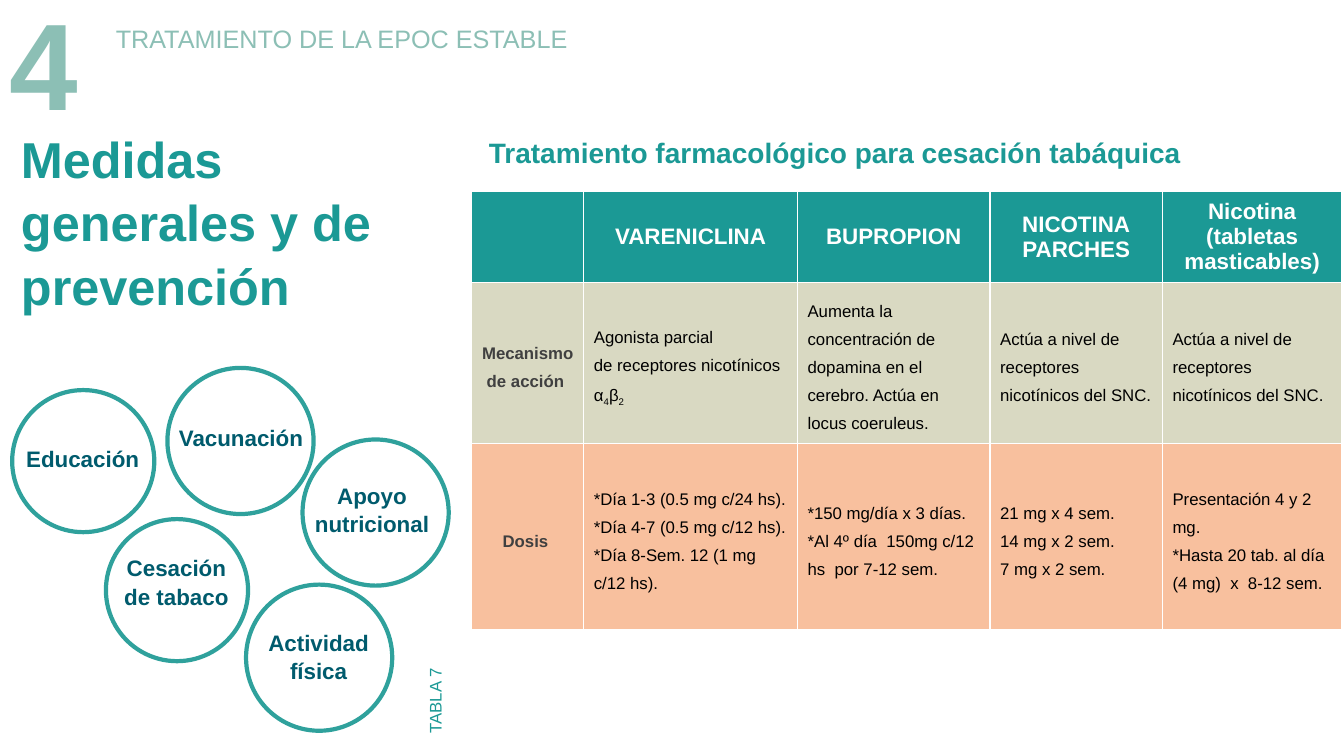
from lxml import etree
from pptx import Presentation
from pptx.dml.color import RGBColor
from pptx.enum.shapes import MSO_SHAPE
from pptx.enum.text import MSO_ANCHOR, MSO_AUTO_SIZE, PP_ALIGN
from pptx.oxml.ns import qn
from pptx.util import Inches, Pt

LEFT, CENTER = PP_ALIGN.LEFT, PP_ALIGN.CENTER
MIDDLE = MSO_ANCHOR.MIDDLE
GROW = MSO_AUTO_SIZE.SHAPE_TO_FIT_TEXT
ELLIPSE = MSO_SHAPE.OVAL

FONT = "Arial"
COLORS = {
    "teal": "1B9995",
    "pale_teal": "8CBFB5",
    "ring": "2FA19C",
    "label": "005B6D",
    "olive": "B9B98D",
    "orange": "F2833E",
    "gray": "404040",
    "black": "000000",
    "white": "FFFFFF",
}

COLUMN_WIDTHS = [1.11, 2.12, 1.91, 1.71, 1.78]
ROW_HEIGHTS = [0.88, 1.59, 1.85]
ROW_FILLS = [("teal", 100), ("olive", 53), ("orange", 50)]
NICOTINE_ACTION = ["Actúa a nivel de receptores nicotínicos del SNC."]
TREATMENTS = [
    [
        [],
        ["VARENICLINA"],
        ["BUPROPION"],
        ["NICOTINA", "PARCHES"],
        ["Nicotina", "(tabletas masticables)"],
    ],
    [
        ["Mecanismo ", "de acción "],
        ["Agonista parcial", ("de receptores nicotínicos α", "4", "β", "2")],
        ["Aumenta la concentración de dopamina en el cerebro. Actúa en locus coeruleus."],
        NICOTINE_ACTION,
        NICOTINE_ACTION,
    ],
    [
        ["Dosis "],
        ["*Día 1-3 (0.5 mg c/24 hs).", "*Día 4-7 (0.5 mg c/12 hs).",
         "*Día 8-Sem. 12 (1 mg c/12 hs)."],
        ["*150 mg/día x 3 días.", "*Al 4º día  150mg c/12 hs  por 7-12 sem."],
        ["21 mg x 4 sem.", "14 mg x 2 sem.", "7 mg x 2 sem."],
        ["Presentación 4 y 2 mg.", "*Hasta 20 tab. al día (4 mg)  x  8-12 sem."],
    ],
]

MEASURES = [
    (["Educación"], -0.3, 4.35, 0.12, 3.87, 1.41),
    (["Cesación", "de tabaco"], 0.63, 5.44, 1.05, 5.15, 1.41),
    (["Vacunación"], 1.27, 4.15, 1.66, 3.65, 1.45),
    (["Apoyo", "nutricional"], 2.57, 4.72, 3, 4.36, 1.45),
    (["Actividad", "física"], 2.04, 6.18, 2.44, 5.8, 1.45),
]


def color(name):
    """Return the named colour."""
    return RGBColor.from_string(COLORS[name])


def write_lines(frame, lines, size, color_name, bold=False, align=LEFT, spacing=1.05):
    """Write one paragraph per line; odd pieces of a tuple are subscripts."""
    for index, line in enumerate(lines):
        para = frame.add_paragraph() if index else frame.paragraphs[0]
        para.alignment = align
        para.line_spacing = spacing
        pieces = (line,) if isinstance(line, str) else line
        for position, piece in enumerate(pieces):
            span = para.add_run()
            span.text = piece
            span.font.name = FONT
            span.font.size = Pt(size)
            span.font.bold = bold
            span.font.color.rgb = color(color_name)
            if position % 2:
                span.font._element.set("baseline", "-25000")


def add_text(shapes, lines, bounds, size, color_name, bold=False, align=LEFT, wrap=True):
    """Add a text box and return it."""
    box = shapes.add_textbox(*map(Inches, bounds))
    box.text_frame.word_wrap = wrap
    box.text_frame.auto_size = GROW
    write_lines(box.text_frame, lines, size, color_name, bold, align)
    return box


def add_measure(page, lines, text_left, text_top, ring_left, ring_top, diameter):
    """Add a grouped label and its ring."""
    group = page.shapes.add_group_shape()
    height = 0.1 + 0.27 * len(lines)
    add_text(group.shapes, lines, (text_left, text_top, 2.24, height),
             16, "label", bold=True, align=CENTER)
    bounds = map(Inches, (ring_left, ring_top, diameter, diameter))
    ring = group.shapes.add_shape(ELLIPSE, *bounds)
    ring.rotation = 45
    ring.shadow.inherit = False
    ring.fill.background()
    ring.line.color.rgb = color("ring")
    ring.line.width = Pt(3)


def fill_cell(cell, color_name, opacity):
    """Fill a cell with the given opacity in percent."""
    cell.fill.solid()
    cell.fill.fore_color.rgb = color(color_name)
    if opacity < 100:
        swatch = cell._tc.tcPr.find(".//" + qn("a:srgbClr"))
        etree.SubElement(swatch, qn("a:alpha")).set("val", str(opacity * 1000))


def add_treatments(page):
    """Add the table of drug treatments."""
    bounds = (4.68, 1.9, sum(COLUMN_WIDTHS), sum(ROW_HEIGHTS))
    table = page.shapes.add_table(
        len(ROW_HEIGHTS), len(COLUMN_WIDTHS), *map(Inches, bounds)).table
    table.horz_banding = False
    for column, width in zip(table.columns, COLUMN_WIDTHS):
        column.width = Inches(width)
    for row, height in zip(table.rows, ROW_HEIGHTS):
        row.height = Inches(height)
    for row_index, row_lines in enumerate(TREATMENTS):
        for column_index, lines in enumerate(row_lines):
            cell = table.cell(row_index, column_index)
            cell.vertical_anchor = MIDDLE
            fill_cell(cell, *ROW_FILLS[row_index])
            if row_index == 0:
                write_lines(cell.text_frame, lines, 16, "white", True, CENTER, 1.0)
            elif column_index == 0:
                write_lines(cell.text_frame, lines, 12, "gray", True, CENTER, 1.5)
            else:
                write_lines(cell.text_frame, lines, 12, "black", spacing=1.5)


def main():
    """Build and save the slide."""
    deck = Presentation()
    deck.slide_width, deck.slide_height = Inches(13.33), Inches(7.5)
    page = deck.slides.add_slide(deck.slide_layouts[6])
    add_text(page.shapes, ["4"], (0, -0.25, 0.89, 1.58), 88, "pale_teal",
             bold=True, wrap=False)
    add_text(page.shapes, ["TRATAMIENTO DE LA EPOC ESTABLE"], (1.05, 0.17, 4.73, 0.4),
             18, "pale_teal", wrap=False)
    add_text(page.shapes, ["Medidas generales y de prevención"],
             (0.11, 1.19, 3.78, 1.92), 36, "teal", bold=True)
    add_text(page.shapes, ["Tratamiento farmacológico para cesación tabáquica"],
             (4.75, 1.28, 8.03, 0.44), 20, "teal", bold=True)
    add_treatments(page)
    caption = add_text(page.shapes, ["TABLA 7"], (3.53, 6.45, 1.55, 0.3), 12, "teal")
    caption.rotation = 270
    for measure in MEASURES:
        add_measure(page, *measure)
    deck.save("out.pptx")


if __name__ == "__main__":
    main()
